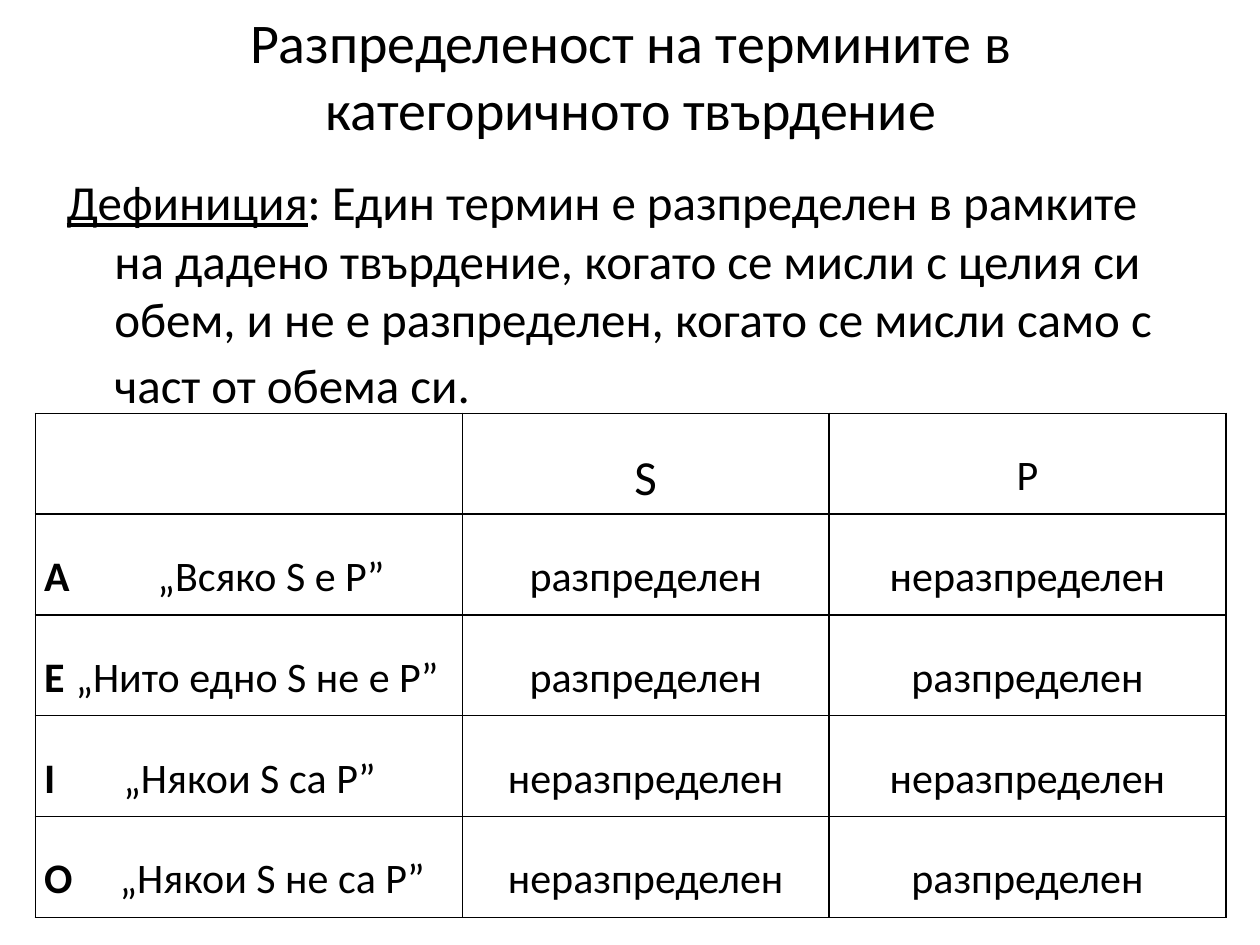
from lxml.etree import SubElement
from pptx import Presentation
from pptx.dml.color import RGBColor
from pptx.enum.text import MSO_ANCHOR, PP_ALIGN
from pptx.oxml.ns import qn
from pptx.util import Inches, Pt

BLACK = RGBColor(0, 0, 0)
WHITE = RGBColor(255, 255, 255)
FONT = "Calibri"

TITLE = "Разпределеност на термините в категоричното твърдение"
TERM = "Дефиниция"
DEFINITION = (": Един термин е разпределен в рамките на дадено твърдение, "
              "когато се мисли с целия си обем, и не е разпределен, "
              "когато се мисли само с част от обема си.")

HEADERS = [("S", 28), ("P", 24)]
YES, NO = "разпределен", "неразпределен"
# letter, statement, where the statement starts (inches), S, P
STATEMENTS = [
    ("А", "„Всяко S е Р”", 0.9, YES, NO),
    ("Е", "„Нито едно S не е Р”", 0.25, YES, YES),
    ("I", "„Някои S са Р”", 0.63, NO, NO),
    ("О", "„Някои S не са Р”", 0.6, NO, YES),
]
COLUMN_WIDTHS = [3.39, 2.91, 3.15]
ROW_HEIGHT = 0.8


def add_span(para, text, size, bold=False, underline=False):
    span = para.add_run()
    span.text = text
    font = span.font
    font.name, font.size, font.bold = FONT, Pt(size), bold
    font.underline = underline
    font.color.rgb = BLACK


def add_text_box(page, left, top, width, height, anchor):
    box = page.shapes.add_textbox(Inches(left), Inches(top), Inches(width), Inches(height))
    frame = box.text_frame
    frame.word_wrap = True
    frame.vertical_anchor = anchor
    return frame.paragraphs[0]


def add_tab_stop(para, position):
    stops = SubElement(para._p.get_or_add_pPr(), qn("a:tabLst"))
    SubElement(stops, qn("a:tab"), pos=str(Inches(position)), algn="l")


def format_cell(cell):
    """Give the cell black borders, a plain fill and its text settings."""
    cell.vertical_anchor = MSO_ANCHOR.MIDDLE
    cell.margin_left = cell.margin_right = Inches(0.07)
    cell.margin_top = cell.margin_bottom = 0
    properties = cell._tc.get_or_add_tcPr()
    for side in ("a:lnL", "a:lnR", "a:lnT", "a:lnB"):
        line = SubElement(properties, qn(side), w=str(Pt(1)))
        fill = SubElement(line, qn("a:solidFill"))
        SubElement(fill, qn("a:srgbClr"), val=str(BLACK))
    cell.fill.background()
    para = cell.text_frame.paragraphs[0]
    para.line_spacing = 1.5
    return para


deck = Presentation()
deck.slide_width, deck.slide_height = Inches(10), Inches(7.5)
page = deck.slides.add_slide(deck.slide_layouts[6])
page.background.fill.solid()
page.background.fill.fore_color.rgb = WHITE

title = add_text_box(page, 0.51, 0.21, 9, 0.77, MSO_ANCHOR.MIDDLE)
title.alignment = PP_ALIGN.CENTER
add_span(title, TITLE, 32)

definition = add_text_box(page, 0.43, 1.31, 9, 1.97, MSO_ANCHOR.TOP)
definition.space_before = Pt(5.6)
indent = definition._p.get_or_add_pPr()
indent.set("marL", str(Inches(0.38)))
indent.set("indent", str(-Inches(0.38)))
add_span(definition, TERM, 28, underline=True)
add_span(definition, DEFINITION, 28)
add_span(definition, "\t", 32)

row_count = len(STATEMENTS) + 1
table = page.shapes.add_table(
    row_count, len(COLUMN_WIDTHS), Inches(0.28), Inches(3.28),
    Inches(sum(COLUMN_WIDTHS)), Inches(ROW_HEIGHT * row_count)).table
table.first_row = table.horz_banding = False
for column, width in zip(table.columns, COLUMN_WIDTHS):
    column.width = Inches(width)
for row in table.rows:
    row.height = Inches(ROW_HEIGHT)

paras = [[format_cell(cell) for cell in row.cells] for row in table.rows]
for para, (text, size) in zip(paras[0][1:], HEADERS):
    para.alignment = PP_ALIGN.CENTER
    add_span(para, text, size)
for row_paras, (letter, statement, start, *values) in zip(paras[1:], STATEMENTS):
    add_tab_stop(row_paras[0], start)
    add_span(row_paras[0], letter + "\t", 24, bold=True)
    add_span(row_paras[0], statement, 24)
    for para, value in zip(row_paras[1:], values):
        para.alignment = PP_ALIGN.CENTER
        add_span(para, value, 24)

deck.save("out.pptx")
